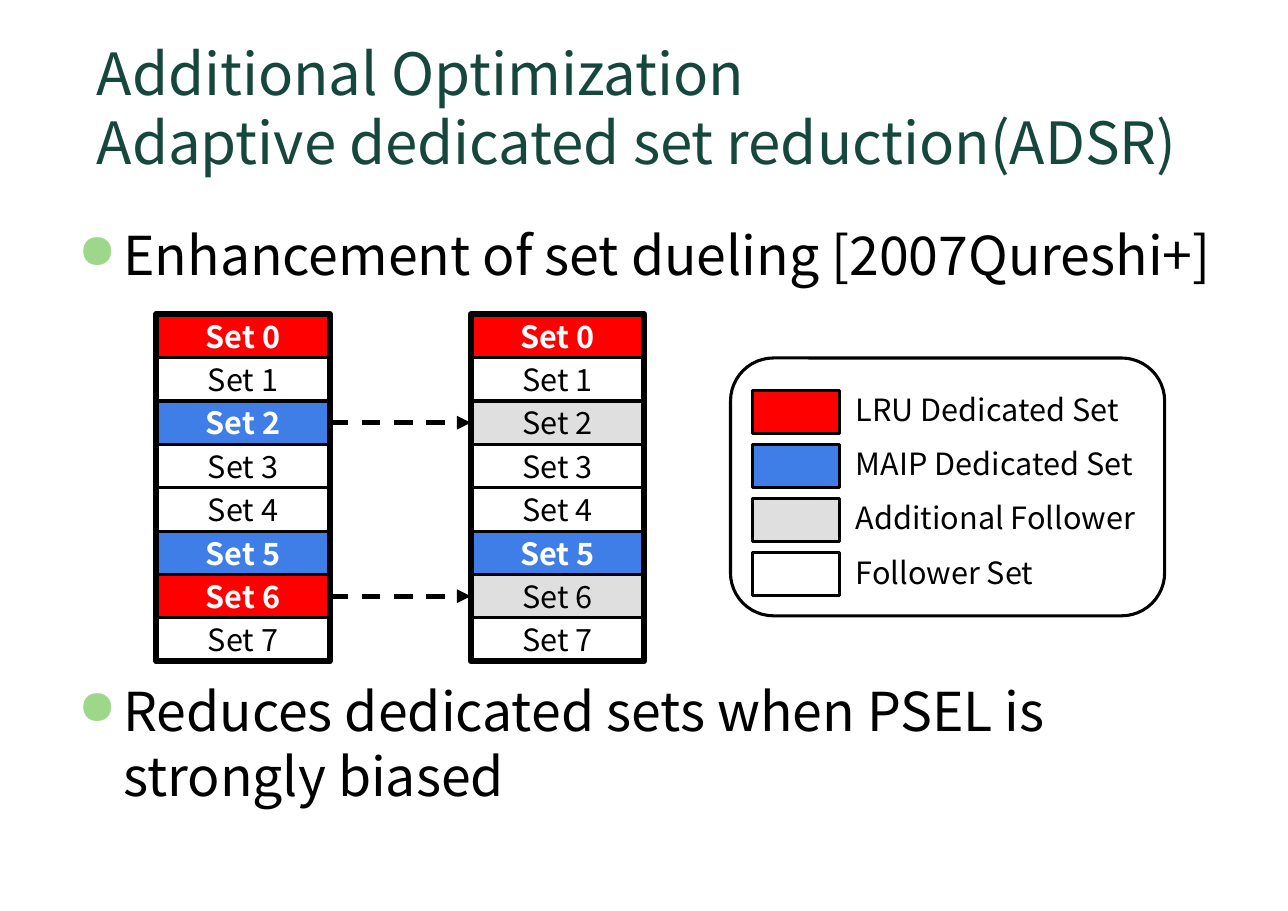
from dataclasses import dataclass

from lxml import etree
from pptx import Presentation
from pptx.dml.color import RGBColor
from pptx.enum import dml, shapes, text
from pptx.oxml import ns
from pptx.util import Pt

# Content
TITLE = ["Additional Optimization", "Adaptive dedicated set reduction(ADSR)"]
BULLETS = [  # top, wording
    (141.8, "Enhancement of set dueling [2007Qureshi+]"),
    (439.7, "Reduces dedicated sets when PSEL is strongly biased"),
]
STACKS = [  # left, kind of each set from 0 to 7
    (102.2, ["lru", "follower", "maip", "follower", "follower", "maip", "lru", "follower"]),
    (307.6, ["lru", "follower", "added", "follower", "follower", "maip", "added", "follower"]),
]
LEGEND = [
    ("lru", "LRU Dedicated Set"),
    ("maip", "MAIP Dedicated Set"),
    ("added", "Additional Follower"),
    ("follower", "Follower Set"),
]
DEDICATED = ("lru", "maip")


@dataclass(frozen=True)
class Theme:
    font = "Noto Sans CJK JP"
    title_size, bullet_size, label_size = 38, 35, 20
    title, ink, white, bullet = "15473D", "000000", "FFFFFF", "9DD789"
    kinds = {"lru": "FF0000", "maip": "3E7EE6", "added": "DFDFDF", "follower": "FFFFFF"}
    thin, dashed, frame = 2, 3, 4


# Layout, in points
STACK_TOP, SET_WIDTH, SET_HEIGHT = 205.4, 113.3, 28.35
LEGEND_BOX = (477.4, 234, 283.7, 168.5)
SWATCH_LEFT, SWATCH_TOP, SWATCH_WIDTH = 491.8, 255, 56.9
LABEL_LEFT, LABEL_TOP, LABEL_WIDTH, LABEL_HEIGHT = 552.2, 252, 201.6, 31.7
LEGEND_PITCH = 35.4

deck = Presentation()
deck.slide_width, deck.slide_height = Pt(841.7), Pt(595.4)
slide = deck.slides.add_slide(deck.slide_layouts[6])


def rgb(colour):
    return RGBColor.from_string(colour)


def add_run(paragraph, wording, size, colour, bold=False):
    run = paragraph.add_run()
    run.text = wording
    run.font.name, run.font.size, run.font.bold = Theme.font, Pt(size), bold
    run.font.color.rgb = rgb(colour)


def add_words(box):
    frame = slide.shapes.add_textbox(*map(Pt, box)).text_frame
    frame.word_wrap = True
    return frame


def add_block(box, fill=None, weight=Theme.thin, preset=shapes.MSO_SHAPE.RECTANGLE):
    block = slide.shapes.add_shape(preset, *map(Pt, box))
    block.shadow.inherit = False
    if fill:
        block.fill.solid()
        block.fill.fore_color.rgb = rgb(fill)
    else:
        block.fill.background()
    block.line.color.rgb = rgb(Theme.ink)
    block.line.width = Pt(weight)
    return block


def add_arrow(start, end, y):
    arrow = slide.shapes.add_connector(
        shapes.MSO_CONNECTOR.STRAIGHT, Pt(start), Pt(y), Pt(end), Pt(y))
    arrow.line.color.rgb = rgb(Theme.ink)
    arrow.line.width = Pt(Theme.dashed)
    arrow.line.dash_style = dml.MSO_LINE.DASH
    etree.SubElement(arrow.line._get_or_add_ln(), ns.qn("a:tailEnd"), type="triangle")
    etree.SubElement(arrow._element.spPr, ns.qn("a:effectLst"))


def add_bullet(paragraph):
    props = paragraph._p.get_or_add_pPr()
    props.set("marL", str(Pt(31)))
    props.set("indent", str(Pt(-29.5)))
    colour = etree.SubElement(props, ns.qn("a:buClr"))
    etree.SubElement(colour, ns.qn("a:srgbClr"), val=Theme.bullet)
    etree.SubElement(props, ns.qn("a:buSzPct"), val="90000")
    etree.SubElement(props, ns.qn("a:buChar"), char="●")


# Title
heading = add_words((56.2, 15.8, 729.4, 108))
heading.vertical_anchor = text.MSO_ANCHOR.MIDDLE
heading_lines = heading.paragraphs[0]
for number, wording in enumerate(TITLE):
    if number:
        heading_lines.add_line_break()
    add_run(heading_lines, wording, Theme.title_size, Theme.title)

# Bullets
for top, wording in BULLETS:
    point = add_words((42.5, top, 757.4, 100)).paragraphs[0]
    add_bullet(point)
    add_run(point, wording, Theme.bullet_size, Theme.ink)

# Cache sets before and after the reduction
for left, kinds in STACKS:
    for number, kind in enumerate(kinds):
        top = STACK_TOP + number * SET_HEIGHT
        cache_set = add_block((left, top, SET_WIDTH, SET_HEIGHT), Theme.kinds[kind]).text_frame
        cache_set.vertical_anchor = text.MSO_ANCHOR.MIDDLE
        name = cache_set.paragraphs[0]
        name.alignment = text.PP_ALIGN.CENTER
        dedicated = kind in DEDICATED
        add_run(name, f"Set {number}", Theme.label_size,
                Theme.white if dedicated else Theme.ink, dedicated)
    add_block((left, STACK_TOP, SET_WIDTH, len(kinds) * SET_HEIGHT), weight=Theme.frame)

# Arrows from each set that changes its kind
(before_left, before), (after_left, after) = STACKS
for number, (old, new) in enumerate(zip(before, after)):
    if old != new:
        add_arrow(before_left + SET_WIDTH, after_left, STACK_TOP + (number + 0.5) * SET_HEIGHT)

# Legend
add_block(LEGEND_BOX, Theme.white, preset=shapes.MSO_SHAPE.ROUNDED_RECTANGLE)
for row, (kind, wording) in enumerate(LEGEND):
    shift = row * LEGEND_PITCH
    add_block((SWATCH_LEFT, SWATCH_TOP + shift, SWATCH_WIDTH, SET_HEIGHT), Theme.kinds[kind])
    label = add_words((LABEL_LEFT, LABEL_TOP + shift, LABEL_WIDTH, LABEL_HEIGHT))
    add_run(label.paragraphs[0], wording, Theme.label_size, Theme.ink)

deck.save("out.pptx")
